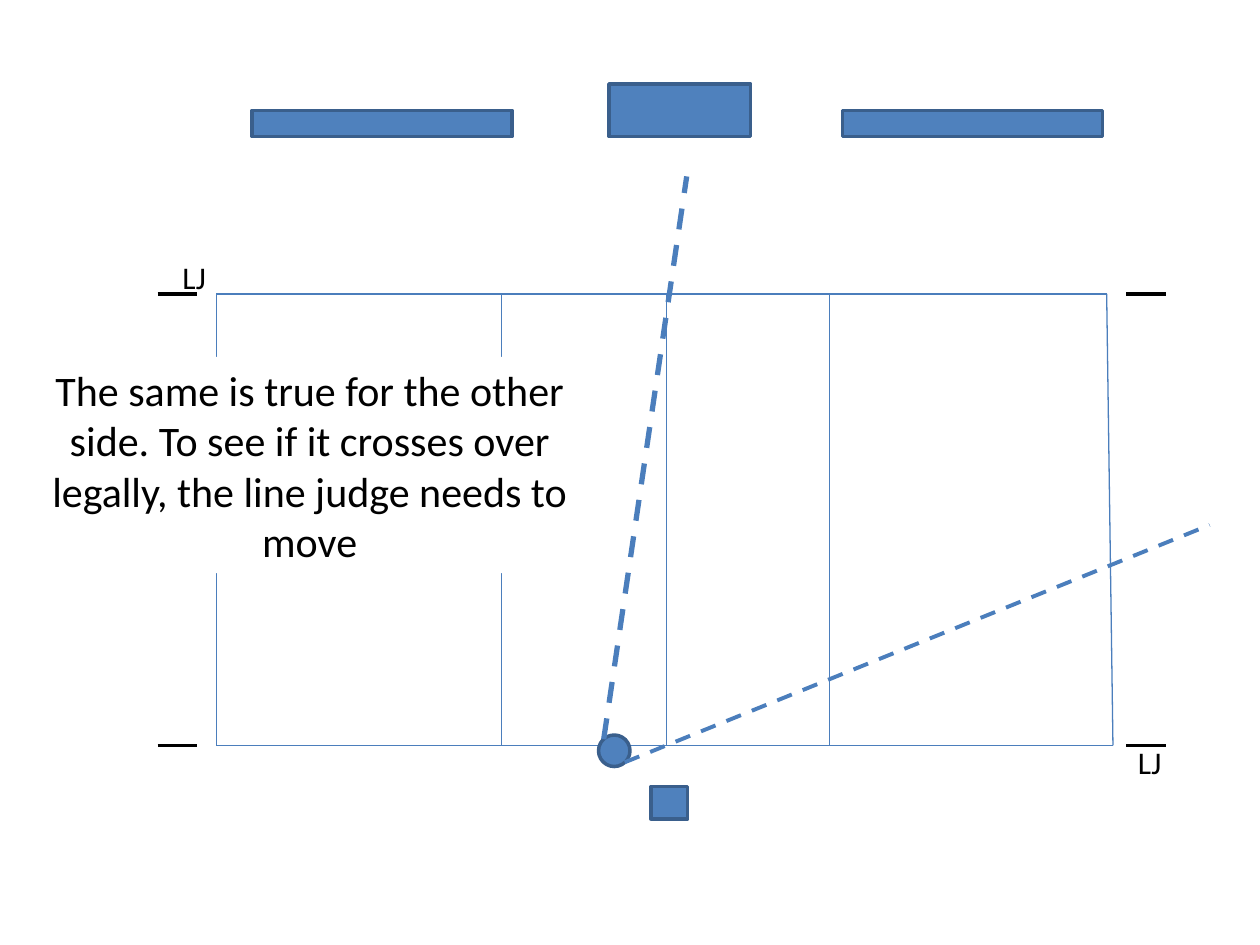
"""Build the line judge court slide on a grid of 120 columns by 90 rows."""
import pptx
import pptx.util
import pptx.dml.color
import pptx.enum.dml
import pptx.enum.shapes
import pptx.enum.text
import pptx.oxml.ns
import lxml.etree

INK = {"black": "000000", "white": "FFFFFF", "fill": "4F81BD",
       "edge": "3A5F8C", "line": "4B7EBC"}
KIND = pptx.enum.shapes.MSO_SHAPE


class Court:
    """Hold the style and the current slide."""

    font = "Calibri"
    cell = pptx.util.Inches(1) / 12

    def __init__(self, deck):
        """Add a blank slide to the deck."""
        self.slide = deck.slides.add_slide(deck.slide_layouts[6])

    def grid(self, *marks):
        """Turn grid marks into lengths."""
        return [pptx.util.Emu(round(m * self.cell)) for m in marks]

    def tint(self, name):
        """Return a named colour."""
        return pptx.dml.color.RGBColor.from_string(INK[name])

    def line(self, start, end, ink="line", width=0.75, dash=False):
        """Draw a straight line between two grid points."""
        link = self.slide.shapes.add_connector(
            pptx.enum.shapes.MSO_CONNECTOR.STRAIGHT, *self.grid(*start, *end))
        link.line.color.rgb = self.tint(ink)
        link.line.width = pptx.util.Pt(width)
        if dash:
            link.line.dash_style = pptx.enum.dml.MSO_LINE.DASH
        props = link._element.spPr
        lxml.etree.SubElement(props, pptx.oxml.ns.qn("a:effectLst"))

    def shape(self, box, kind=KIND.RECTANGLE, fill="fill", edge="edge"):
        """Draw a filled shape, with an edge unless it is None."""
        item = self.slide.shapes.add_shape(kind, *self.grid(*box))
        item.shadow.inherit = False
        item.fill.solid()
        item.fill.fore_color.rgb = self.tint(fill)
        if edge:
            item.line.color.rgb = self.tint(edge)
            item.line.width = pptx.util.Pt(2)
        else:
            item.line.fill.background()
        return item

    def words(self, item, text, size):
        """Put one centred run of text in a shape."""
        frame = item.text_frame
        frame.word_wrap = True
        frame.auto_size = pptx.enum.text.MSO_AUTO_SIZE.SHAPE_TO_FIT_TEXT
        para = frame.paragraphs[0]
        para.alignment = pptx.enum.text.PP_ALIGN.CENTER
        run = para.add_run()
        run.text = text
        run.font.name = self.font
        run.font.size = pptx.util.Pt(size)
        run.font.color.rgb = self.tint("black")

    def label(self, box, text, size=18):
        """Add a plain text box."""
        self.words(self.slide.shapes.add_textbox(*self.grid(*box)), text, size)

    def panel(self, box, text, size=24):
        """Add text on a white panel."""
        self.words(self.shape(box, fill="white", edge=None), text, size)


def main():
    """Draw the court, the judges and the sight lines."""
    deck = pptx.Presentation()
    deck.slide_width = pptx.util.Inches(10)
    deck.slide_height = pptx.util.Inches(7.5)
    court = Court(deck)
    top, base, left = 28, 71, 20.6
    far, near = (105.4, top), (106, base)

    for row in (top, base):
        for col in (15, 107.25):
            court.line((col, row), (col + 3.75, row), "black", 2.25)

    bench, stand, desk = 24.75, (58, 8, 13.5, 5), (62, 74.9, 3.5, 3.1)
    for box in (desk, stand, (80.25, 10.5, bench, 2.5), (24, 10.5, bench, 2.5)):
        court.shape(box)

    for col in (left, 47.75, 63.5, 79):
        court.line((col, top), (col, base))
    court.line(far, near)
    court.line((left, base), near)
    court.line((left, top), far)

    for spot in ((106, 70.2), (15, 24)):
        court.label((*spot, 7, 4.8), "LJ")

    court.shape((57, 70, 3, 3), KIND.FLOWCHART_CONNECTOR)
    court.panel((3, 34, 53, 20.6),
                "The same is true for the other side. To see if it crosses "
                "over legally, the line judge needs to move")
    court.line((59.5, 72.6), (115.2, 50), width=2.25, dash=True)
    court.line((57.5, 70.4), (65.4, 16.8), width=3, dash=True)
    deck.save("out.pptx")


if __name__ == "__main__":
    main()
